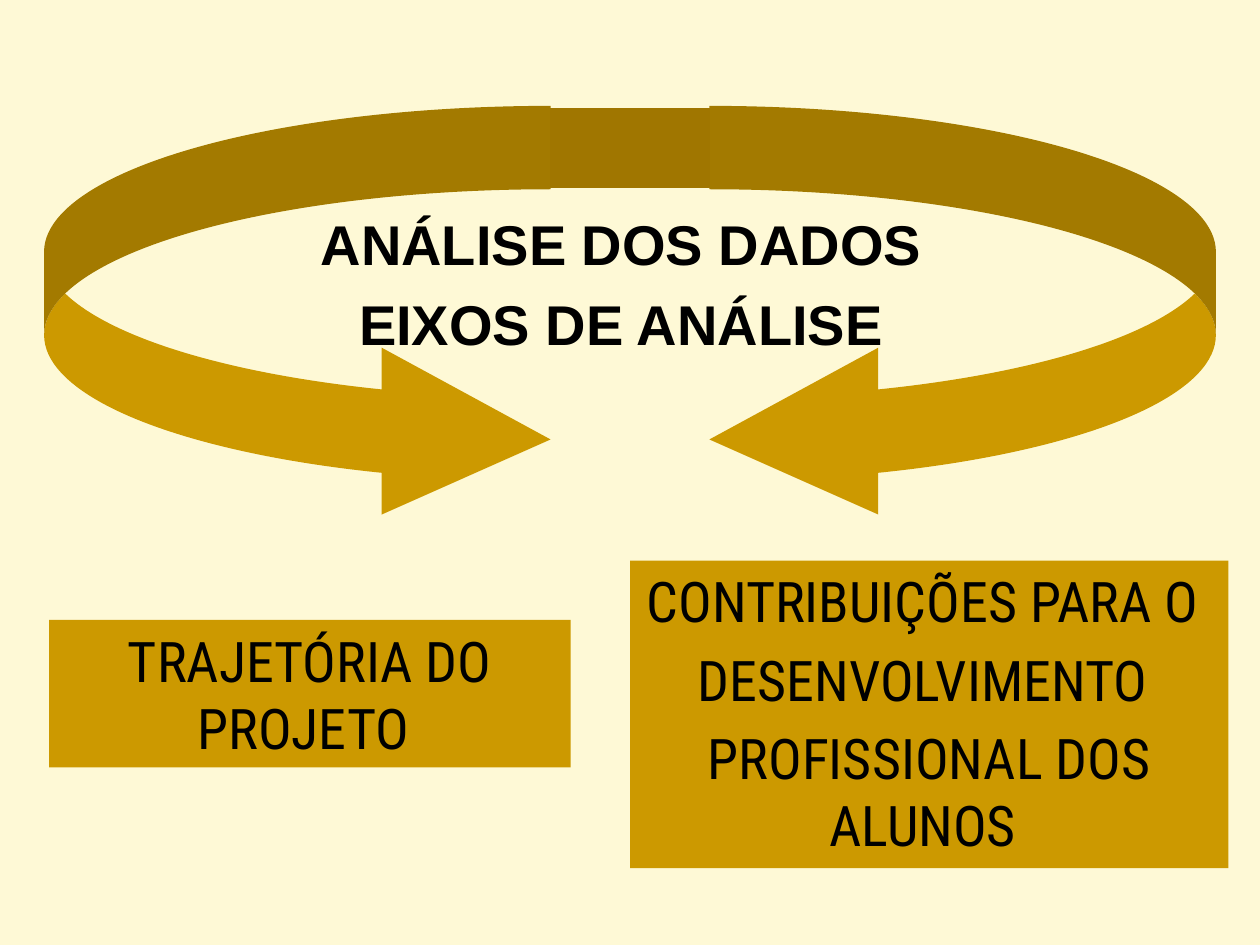
from pptx import Presentation
from pptx.dml.color import RGBColor
from pptx.enum.shapes import MSO_SHAPE
from pptx.enum.text import MSO_ANCHOR, PP_ALIGN
from pptx.util import Inches, Pt

COLORS = {"background": "FEF9D6", "gold": "CC9900", "band": "A07600", "text": "000000"}


def paint(shape, color):
    shape.shadow.inherit = False
    shape.fill.solid()
    shape.fill.fore_color.rgb = RGBColor.from_string(COLORS[color])
    shape.line.fill.background()


def write(shape, lines, font_name, bold, wrap, gap):
    text_frame = shape.text_frame
    text_frame.word_wrap = wrap
    text_frame.vertical_anchor = MSO_ANCHOR.TOP
    text_frame.text = "\n".join(lines)
    for index, paragraph in enumerate(text_frame.paragraphs):
        paragraph.alignment = PP_ALIGN.CENTER
        if index:
            paragraph.space_before = Pt(gap)
        for run in paragraph.runs:
            run.font.name = font_name
            run.font.size = Pt(32)
            run.font.bold = bold
            run.font.color.rgb = RGBColor.from_string(COLORS["text"])


presentation = Presentation()
presentation.slide_width = Inches(10)
presentation.slide_height = Inches(7.5)
slide = presentation.slides.add_slide(presentation.slide_layouts[6])
slide.background.fill.solid()
slide.background.fill.fore_color.rgb = RGBColor.from_string(COLORS["background"])

axes = [
    (0.39, 4.92, 4.14, 1.17, ["TRAJETÓRIA DO PROJETO "]),
    (5, 4.45, 4.75, 2.44,
     ["CONTRIBUIÇÕES PARA O ", "DESENVOLVIMENTO ", "PROFISSIONAL DOS ALUNOS "]),
]
for left, top, width, height, lines in axes:
    box = slide.shapes.add_shape(
        MSO_SHAPE.RECTANGLE, Inches(left), Inches(top), Inches(width), Inches(height))
    paint(box, "gold")
    write(box, lines, "Roboto Condensed", False, True, 6.4)

title = slide.shapes.add_textbox(Inches(2.42), Inches(1.61), Inches(5.02), Inches(1.29))
write(title, ["ANÁLISE DOS DADOS", "EIXOS DE ANÁLISE"], "Arial", True, False, 7.5)

ring = slide.shapes.add_group_shape()
for left, flipped in [(5.63, False), (0.35, True)]:
    arrow = ring.shapes.add_shape(
        MSO_SHAPE.CURVED_LEFT_ARROW, Inches(left), Inches(0.84), Inches(4.02), Inches(3.31))
    for index, value in enumerate([0.2, 0.4, 0.405]):
        arrow.adjustments[index] = value
    if flipped:
        arrow.element.spPr.xfrm.set("flipH", "1")
    paint(arrow, "gold")

band = ring.shapes.add_shape(
    MSO_SHAPE.RECTANGLE, Inches(4.37), Inches(0.86), Inches(1.26), Inches(0.63))
paint(band, "band")
band.line.color.rgb = RGBColor.from_string(COLORS["band"])
band.line.width = Pt(0.75)

presentation.save("out.pptx")
